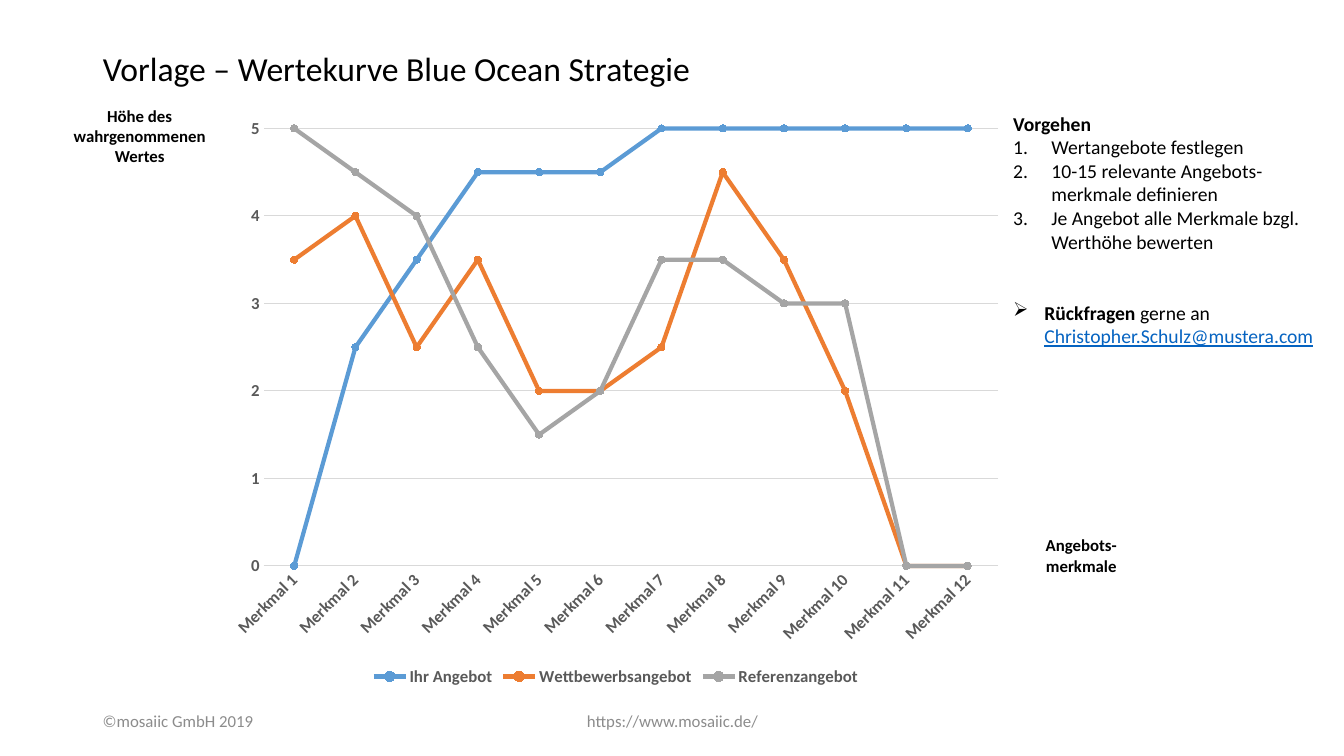
from pptx import Presentation, util as u
from pptx.chart.data import CategoryChartData
from pptx.dml.color import RGBColor
from pptx.enum import chart as ch, text as t
from pptx.oxml.ns import qn

WIDE, HIGH = u.Inches(13.33), u.Inches(7.5)
BLACK, GREY, DARK, PALE, LINK = "000000", "8C8C8C", "595959", "D9D9D9", "0563C1"
CENTER = t.PP_ALIGN.CENTER
CURVES = [
    ("Ihr Angebot", "5B9BD5", (0, 2.5, 3.5, 4.5, 4.5, 4.5, 5, 5, 5, 5, 5, 5)),
    ("Wettbewerbsangebot", "ED7D31", (3.5, 4, 2.5, 3.5, 2, 2, 2.5, 4.5, 3.5, 2, 0, 0)),
    ("Referenzangebot", "A5A5A5", (5, 4.5, 4, 2.5, 1.5, 2, 3.5, 3.5, 3, 3, 0, 0)),
]
STEPS = ["Wertangebote festlegen", "10-15 relevante Angebots-merkmale definieren",
         "Je Angebot alle Merkmale bzgl. Werthöhe bewerten"]


def rgb(code):
    return RGBColor.from_string(code)


def area(left, top, width, height):
    """Turn percentages of the slide into lengths."""
    return (int(WIDE * left / 100), int(HIGH * top / 100),
            int(WIDE * width / 100), int(HIGH * height / 100))


def style(font, size, color=BLACK, bold=False):
    font.name, font.size, font.bold = "Calibri", u.Pt(size), bold
    font.color.rgb = rgb(color)


def add_run(para, words, size, color=BLACK, bold=False):
    run = para.add_run()
    run.text = words
    style(run.font, size, color, bold)
    return run


def add_box(slide, spot, anchor=t.MSO_ANCHOR.TOP):
    frame = slide.shapes.add_textbox(*area(*spot)).text_frame
    frame.word_wrap = True
    frame.vertical_anchor = anchor
    return frame


def add_label(slide, spot, lines, size=12, color=BLACK, bold=True,
              align=CENTER, anchor=t.MSO_ANCHOR.TOP):
    frame = add_box(slide, spot, anchor)
    for i, line in enumerate(lines):
        para = frame.add_paragraph() if i else frame.paragraphs[0]
        para.alignment = align
        add_run(para, line, size, color, bold)


def add_item(frame, indent, tag, **mark):
    """Add a paragraph with a hanging bullet or number."""
    para = frame.add_paragraph()
    props = para._p.get_or_add_pPr()
    props.set("marL", str(u.Inches(indent)))
    props.set("indent", str(-u.Inches(indent)))
    bullet = props.makeelement(qn(tag), mark)
    props.append(bullet)
    return para


def set_title(slide, words):
    title = slide.shapes.title
    title.left, title.top, title.width, title.height = area(6.9, 5.33, 86.27, 8)
    title.text_frame.vertical_anchor = t.MSO_ANCHOR.MIDDLE
    para = title.text_frame.paragraphs[0]
    para.alignment, para.line_spacing = t.PP_ALIGN.LEFT, 0.9
    add_run(para, words, 24)


def add_chart(slide):
    data = CategoryChartData()
    data.categories = [f"Merkmal {n}" for n in range(1, 13)]
    for name, _, values in CURVES:
        data.add_series(name, values)
    spot = area(16.2, 14.13, 59.26, 77.2)
    chart = slide.shapes.add_chart(ch.XL_CHART_TYPE.LINE_MARKERS, *spot, data).chart
    style(chart.font, 10)
    chart.has_title = False
    chart.has_legend = True
    chart.legend.position = ch.XL_LEGEND_POSITION.BOTTOM
    chart.legend.include_in_layout = False
    style(chart.legend.font, 12, DARK, True)
    cats, vals = chart.category_axis, chart.value_axis
    for axis in (cats, vals):
        axis.major_tick_mark = axis.minor_tick_mark = ch.XL_TICK_MARK.NONE
        style(axis.tick_labels.font, 12, DARK, True)
    chart.element.xpath("//c:catAx/c:txPr/a:bodyPr")[0].set("rot", "-2700000")
    vals.minimum_scale, vals.maximum_scale, vals.major_unit = 0, 5, 1
    vals.format.line.fill.background()
    for line in (cats.format.line, vals.major_gridlines.format.line):
        line.color.rgb, line.width = rgb(PALE), u.Pt(0.75)
    plot = chart.plots[0]
    plot.vary_by_categories = False
    for series, (_, color, _) in zip(plot.series, CURVES):
        series.smooth = False
        series.format.line.color.rgb = rgb(color)
        series.format.line.width = u.Pt(3)
        mark = series.marker
        mark.style, mark.size = ch.XL_MARKER_STYLE.CIRCLE, 5
        mark.format.fill.solid()
        mark.format.fill.fore_color.rgb = rgb(color)
        mark.format.line.color.rgb = rgb(color)


def add_guide(slide):
    frame = add_box(slide, (74.64, 14.13, 24.53, 32.8))
    add_run(frame.paragraphs[0], "Vorgehen", 14, bold=True)
    for step in STEPS:
        add_run(add_item(frame, 0.38, "a:buAutoNum", type="arabicPeriod"), step, 14)
    para = add_item(frame, 0.31, "a:buChar", char="➢")
    para.space_before = u.Pt(34)
    add_run(para, "Rückfragen", 14, bold=True)
    add_run(para, " gerne an ", 14)
    add_run(para, "Christopher.Schulz@mustera.com", 14, LINK).font.underline = True


def main():
    deck = Presentation()
    deck.slide_width, deck.slide_height = WIDE, HIGH
    slide = deck.slides.add_slide(deck.slide_layouts[5])
    set_title(slide, "Vorlage – Wertekurve Blue Ocean Strategie")
    foot = dict(color=GREY, bold=False, anchor=t.MSO_ANCHOR.MIDDLE)
    add_label(slide, (6.9, 92.67, 22.5, 5.33), ["©mosaiic GmbH 2019"],
              align=t.PP_ALIGN.LEFT, **foot)
    add_label(slide, (33.16, 92.67, 33.76, 5.33), ["https://www.mosaiic.de/"], **foot)
    add_chart(slide)
    add_label(slide, (74.64, 70.13, 11.63, 6.67), ["Angebots-merkmale"])
    add_label(slide, (4.58, 13.33, 11.63, 9.47), ["Höhe des", "wahrgenommenen Wertes"])
    add_guide(slide)
    deck.save("out.pptx")


if __name__ == "__main__":
    main()
